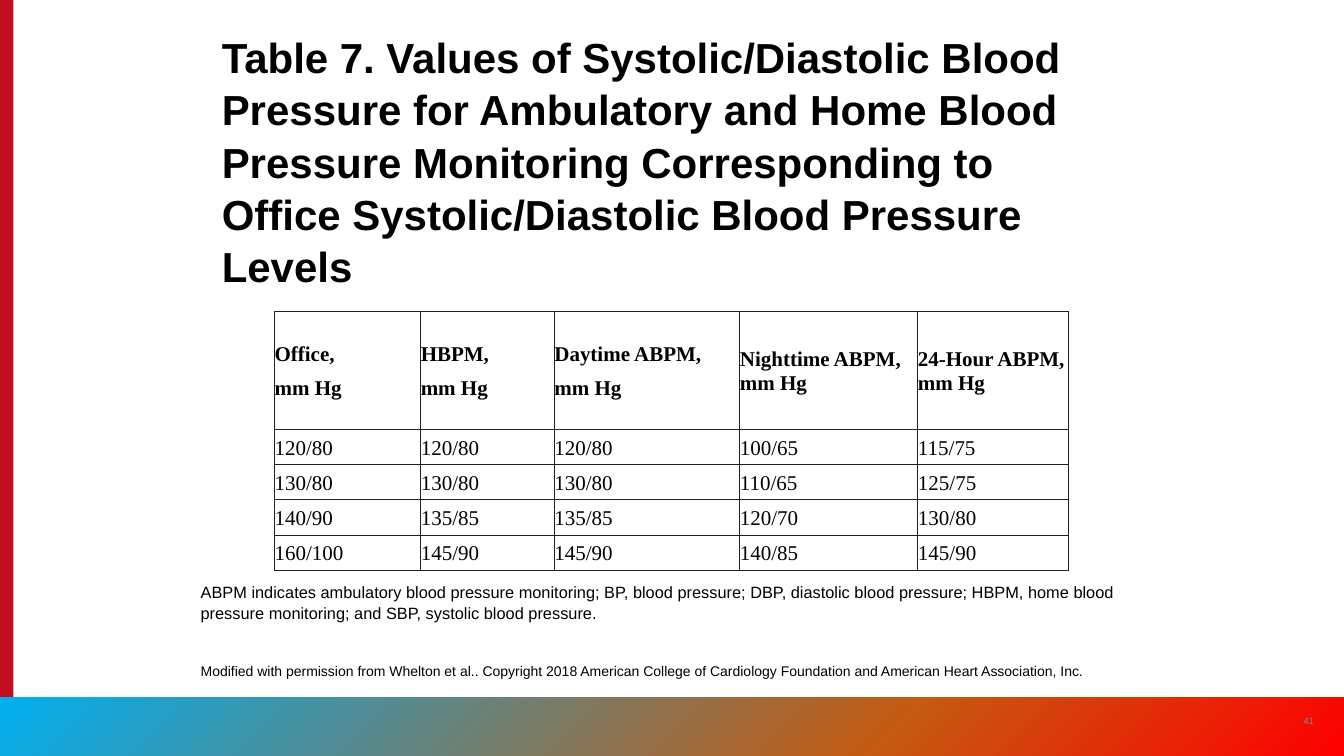
from copy import deepcopy

from lxml.etree import SubElement
from pptx import Presentation
from pptx.dml.color import RGBColor
from pptx.enum.shapes import MSO_SHAPE as SHAPE
from pptx.enum.text import MSO_ANCHOR as ANCHOR, MSO_AUTO_SIZE as AUTO, PP_ALIGN as ALIGN
from pptx.oxml.ns import qn
from pptx.util import Pt


def rgb(value):
    return RGBColor.from_string(value)


def add_run(p, text, size, color="000000", font="Arial", bold=False):
    r = p.add_run()
    r.text = text
    r.font.size = Pt(size)
    r.font.name = font
    r.font.bold = bold
    r.font.color.rgb = rgb(color)


prs = Presentation()
prs.slide_width, prs.slide_height = Pt(1152), Pt(648)
s = prs.slides.add_slide(prs.slide_layouts[5])

# Side bar and footer band
side_bar = s.shapes.add_shape(SHAPE.RECTANGLE, 0, 0, Pt(11.5), Pt(648))
footer = s.shapes.add_shape(SHAPE.RECTANGLE, 0, Pt(597.6), Pt(1152), Pt(50.4))
for sp in (side_bar, footer):
    sp.shadow.inherit = False
    sp.line.fill.background()
side_bar.fill.solid()
side_bar.fill.fore_color.rgb = rgb("C10E21")

footer.fill.gradient()
footer.fill.gradient_angle = 315
stop_list = footer._element.spPr.find(qn("a:gradFill")).find(qn("a:gsLst"))
stop_list.insert(1, deepcopy(stop_list[0]))
stops = [(0, "00B0F0"), (0.66, "C55A11"), (1, "FF0000")]
for stop, (position, color) in zip(footer.fill.gradient_stops, stops):
    stop.position = position
    stop.color.rgb = rgb(color)

# Title
title = s.shapes.title
title.left, title.top, title.width, title.height = Pt(182.9), Pt(79.2), Pt(786.2), Pt(174.2)
tf = title.text_frame
tf.word_wrap = True
tf.auto_size = AUTO.NONE
tf.vertical_anchor = ANCHOR.BOTTOM
p = tf.paragraphs[0]
p.alignment = ALIGN.LEFT
p.line_spacing = 1.04
add_run(p, "Table 7. Values of Systolic/Diastolic Blood Pressure for Ambulatory and Home "
        "Blood Pressure Monitoring Corresponding to Office Systolic/Diastolic Blood "
        "Pressure Levels", 36, bold=True)

# Blood pressure table; a line break starts a new paragraph
rows = [
    ["Office,\nmm Hg", "HBPM,\nmm Hg", "Daytime ABPM,\nmm Hg",
     "Nighttime ABPM, mm Hg", "24-Hour ABPM, mm Hg"],
    ["120/80", "120/80", "120/80", "100/65", "115/75"],
    ["130/80", "130/80", "130/80", "110/65", "125/75"],
    ["140/90", "135/85", "135/85", "120/70", "130/80"],
    ["160/100", "145/90", "145/90", "140/85", "145/90"],
]
col_widths = [125.3, 114.5, 159.1, 152.6, 128.9]
row_heights = [101] + [30.2] * 4
table = s.shapes.add_table(len(rows), len(col_widths), Pt(235.4), Pt(267.1),
                           Pt(sum(col_widths)), Pt(sum(row_heights))).table
table.first_row = table.horz_banding = False
for col, width in zip(table.columns, col_widths):
    col.width = Pt(width)

for i, (row, height) in enumerate(zip(rows, row_heights)):
    table.rows[i].height = Pt(height)
    for j, text in enumerate(row):
        cell = table.cell(i, j)
        cell.margin_left = cell.margin_right = cell.margin_top = cell.margin_bottom = 0
        cell.vertical_anchor = ANCHOR.MIDDLE
        tf = cell.text_frame
        for k, part in enumerate(text.split("\n")):
            p = tf.add_paragraph() if k else tf.paragraphs[0]
            p.line_spacing = 1.07
            p.space_after = Pt(8)
            add_run(p, part, 18, font="Times New Roman", bold=i == 0)
        cell_pr = cell._tc.get_or_add_tcPr()
        for side in ("a:lnL", "a:lnR", "a:lnT", "a:lnB"):
            border = SubElement(cell_pr, qn(side), w=str(Pt(1)))
            SubElement(SubElement(border, qn("a:solidFill")), qn("a:srgbClr"), val="231F20")
        cell.fill.background()

# Notes under the table
notes = [
    ("ABPM indicates ambulatory blood pressure monitoring; BP, blood pressure; DBP, diastolic "
     "blood pressure; HBPM, home blood pressure monitoring; and SBP, systolic blood pressure.",
     14, 0),
    ("Modified with permission from Whelton et al.. Copyright 2018 American College of "
     "Cardiology Foundation and American Heart Association, Inc.", 12, 34),
]
tf = s.shapes.add_textbox(Pt(164.9), Pt(494.6), Pt(822.2), Pt(104.4)).text_frame
tf.word_wrap = True
for k, (text, size, gap) in enumerate(notes):
    p = tf.add_paragraph() if k else tf.paragraphs[0]
    p.line_spacing = 1.05
    p.space_before = Pt(gap)
    add_run(p, text, size)

# Slide number
tf = s.shapes.add_textbox(Pt(1104.5), Pt(600.5), Pt(34.6), Pt(34.6)).text_frame
tf.word_wrap = True
tf.vertical_anchor = ANCHOR.MIDDLE
p = tf.paragraphs[0]
p.alignment = ALIGN.CENTER
add_run(p, "41", 8, "8A8B8A")

prs.save("out.pptx")
